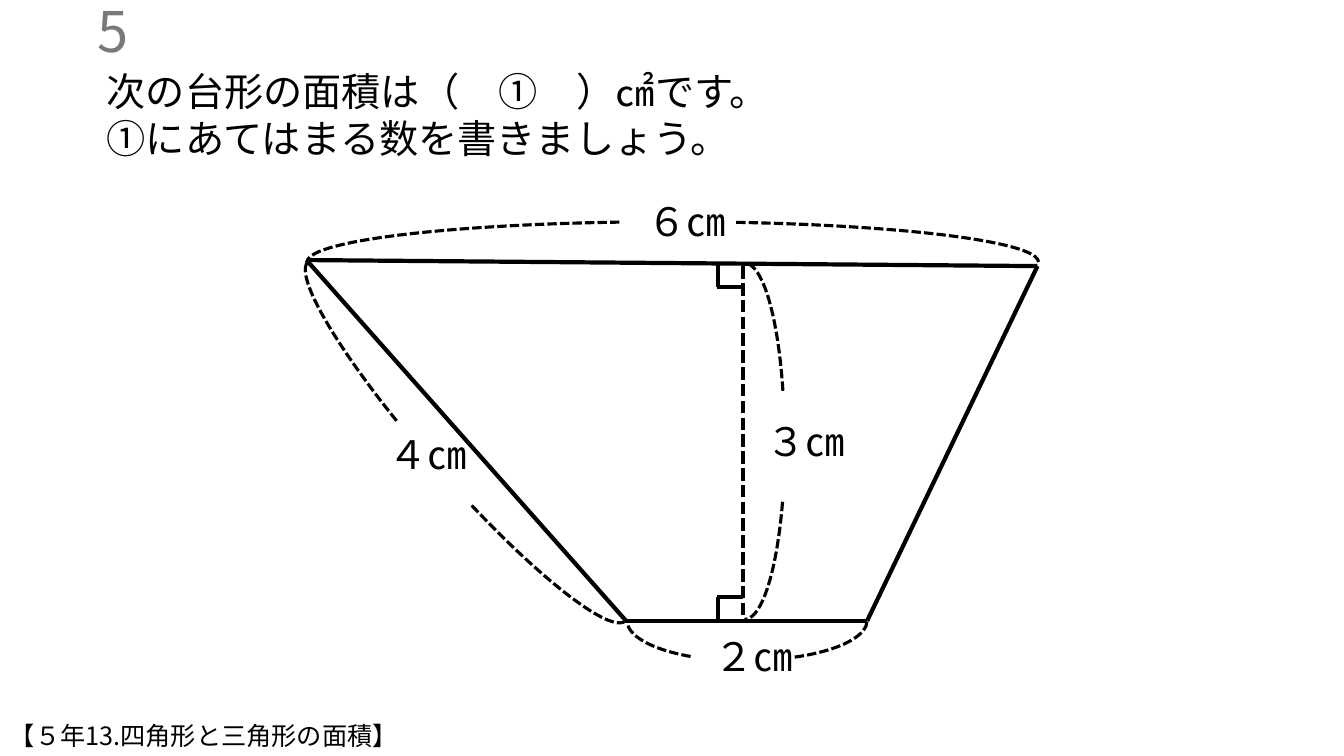
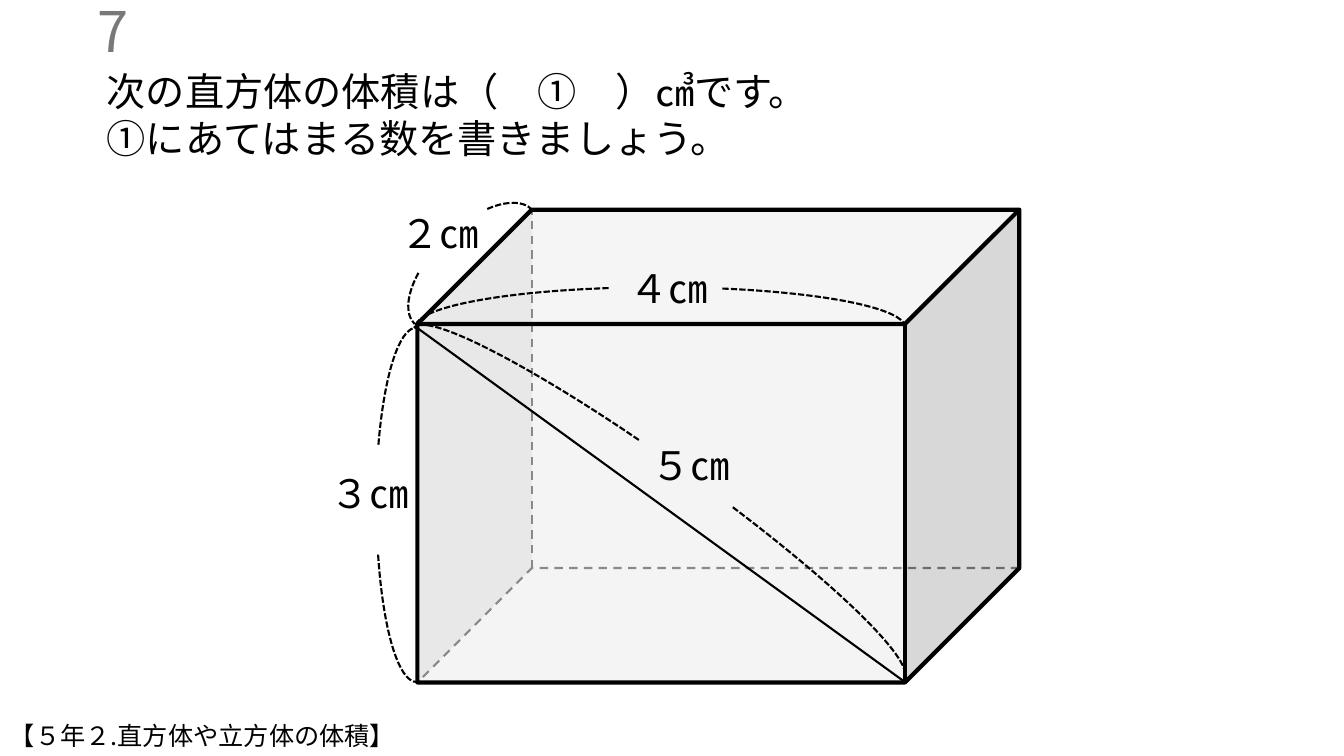
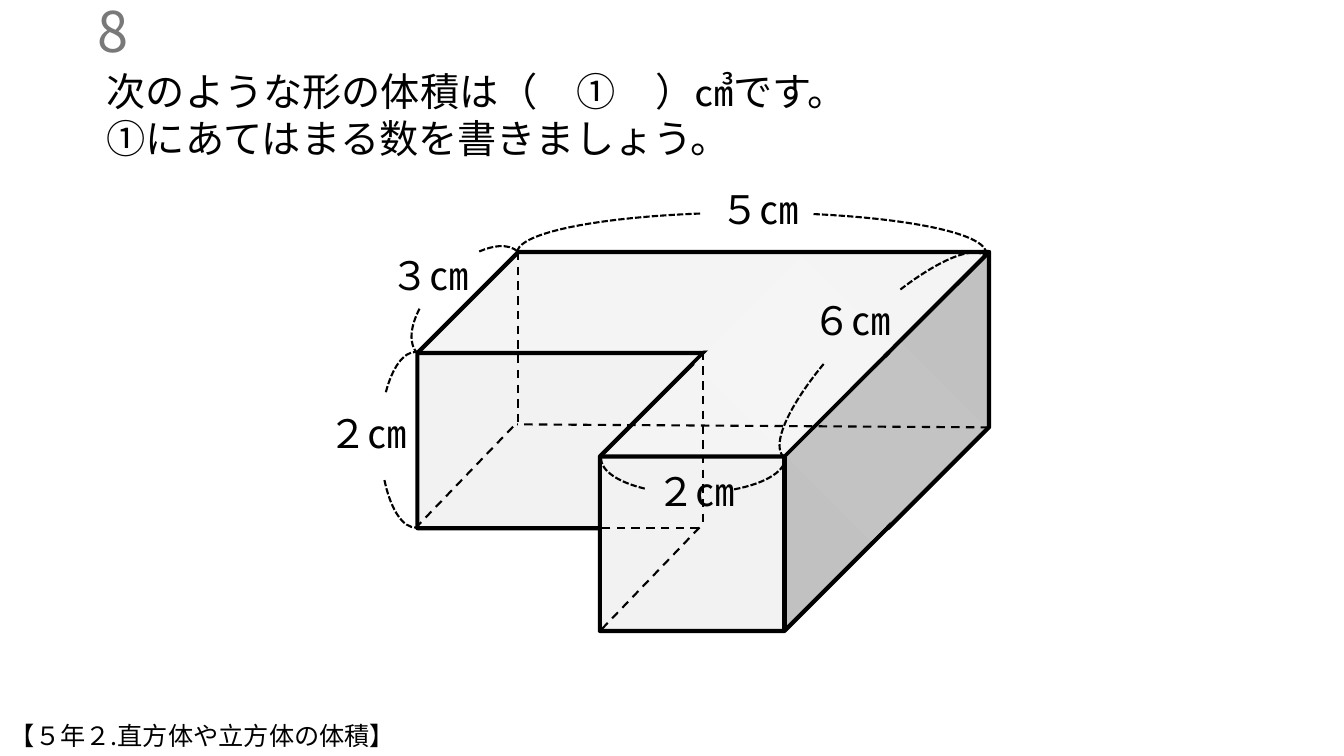
from math import cos, radians, sin

from lxml import etree
from pptx import Presentation
from pptx import util as u
from pptx.dml import color
from pptx.enum import dml, shapes, text
from pptx.oxml import ns

PX = 9144  # EMU in one px, 100 px to the inch
FONT = "Noto Sans CJK JP"
BLACK = color.RGBColor(0x00, 0x00, 0x00)
GREY = color.RGBColor(0x79, 0x79, 0x79)
FACE = color.RGBColor(0xF2, 0xF2, 0xF2)
TOP_FACE = color.RGBColor(0xF5, 0xF5, 0xF5)
SIDE_FACE = color.RGBColor(0xC3, 0xC3, 0xC3)
DASH = dml.MSO_LINE.DASH
FINE_DASH = dml.MSO_LINE.SQUARE_DOT
CUBE = shapes.MSO_SHAPE.CUBE


def emu(*lengths):
    return [u.Emu(round(n * PX)) for n in lengths]


def write(sp, content, size=28, rgb=BLACK, align=text.PP_ALIGN.LEFT, leading=None):
    """Fill a shape with one plain paragraph per line of content."""
    tf = sp.text_frame
    tf.word_wrap = True
    tf.auto_size = text.MSO_AUTO_SIZE.NONE
    tf.vertical_anchor = text.MSO_ANCHOR.MIDDLE
    tf.margin_left = tf.margin_right = u.Emu(10 * PX)
    tf.margin_top = tf.margin_bottom = 0
    for i, line in enumerate(content.split("\n")):
        p = tf.add_paragraph() if i else tf.paragraphs[0]
        pPr = p._p.get_or_add_pPr()
        pPr.set("marL", "0")
        pPr.set("indent", "0")
        etree.SubElement(pPr, ns.qn("a:buNone"))
        p.alignment = align
        p.space_before = u.Pt(0)
        if leading:
            p.line_spacing = u.Pt(leading)
        r = p.add_run()
        r.text = line
        r.font.size = u.Pt(size)
        r.font.name = FONT
        r.font.color.rgb = rgb
        ea = etree.SubElement(r.font._element, ns.qn("a:ea"))
        ea.set("typeface", FONT)


def stroke(line, weight, dash=None):
    line.color.rgb = BLACK
    line.width = u.Pt(weight)
    if dash is not None:
        line.dash_style = dash


class Figure:
    """A drawing whose parts are placed from its own top left corner."""

    def __init__(self, s, left, top):
        self.shapes, self.left, self.top = s.shapes, left, top

    def preset(self, kind, box, rot=0, adj=None, fill=None, alpha=None,
               weight=None, dash=None, flip=False, parent=None):
        x, y, w, h = box
        sp = (parent or self.shapes).add_shape(
            kind, *emu(self.left + x, self.top + y, w, h))
        sp.shadow.inherit = False
        sp.rotation = rot
        if adj is not None:
            sp.adjustments[0] = adj
        if fill is None:
            sp.fill.background()
        else:
            sp.fill.solid()
            sp.fill.fore_color.rgb = fill
        if alpha:
            clr = sp._element.spPr.find(".//" + ns.qn("a:srgbClr"))
            etree.SubElement(clr, ns.qn("a:alpha")).set("val", str(alpha * 1000))
        if weight:
            stroke(sp.line, weight, dash)
        else:
            sp.line.fill.background()
        if flip:
            sp._element.spPr.find(ns.qn("a:xfrm")).set("flipH", "1")
        return sp

    def line(self, x1, y1, x2, y2, weight=3, dash=None):
        ends = emu(self.left + x1, self.top + y1, self.left + x2, self.top + y2)
        cx = self.shapes.add_connector(shapes.MSO_CONNECTOR.STRAIGHT, *ends)
        stroke(cx.line, weight, dash)
        etree.SubElement(cx._element.spPr, ns.qn("a:effectLst"))

    def dimension(self, box, rot, label, label_x, label_y, weight=1.5):
        """Two dashed arcs that meet at a gap, and the length beside it."""
        x, y, w, h = box
        pair = self.shapes.add_group_shape().shapes
        # the mirrored arc is 1% shorter and shares the left end
        shift = 0.005 * w
        dx, dy = shift * (1 - cos(radians(rot))), -shift * sin(radians(rot))
        mirrored = (x + dx, y + dy, 0.99 * w, h - 1)
        for arc_box, start, flip in ((box, 196.71, False), (mirrored, 193, True)):
            arc = self.preset(shapes.MSO_SHAPE.ARC, arc_box, rot, start,
                              weight=weight, dash=FINE_DASH, flip=flip, parent=pair)
            arc.adjustments[1] = 0
        sp = self.shapes.add_textbox(
            *emu(self.left + label_x, self.top + label_y, 118, 57))
        write(sp, label)


def trapezoid(s, left, top):
    fig = Figure(s, left, top)
    for dim in (
        ((5, 30, 725, 80), 0, "６㎝", 332, 1),
        ((322, 386, 238, 80), 180, "２㎝", 399, 432),
        ((-75, 208, 476, 80), 228.6, "４㎝", 75, 232),
        ((262, 208, 353, 80), 90, "３㎝", 450, 219),
    ):
        fig.dimension(*dim, weight=2.25)
    # outline
    corners = [(4, 68), (729, 74), (560, 426), (321, 426)]
    for a, b in zip(corners, corners[1:] + corners[:1]):
        fig.line(*a, *b)
    # height with its right angles
    fig.line(437, 74, 437, 427, dash=FINE_DASH)
    for y, base in ((95, 70), (402, 426)):
        fig.line(437, y, 411, y)
        fig.line(412, base, 412, y)


def cuboid(s, left, top):
    fig = Figure(s, left, top)
    # hidden edges, then visible faces
    for rot, weight, dash in ((180, 1.5, DASH), (0, 3, None)):
        fig.preset(CUBE, (114, 8, 597, 469), rot, 0.242, FACE, 57, weight, dash)
    fig.line(112, 124, 598, 477, 1.5)
    for dim in (
        ((88, 25, 163, 80), 315.6, "２㎝", 87, 3),
        ((-63, 261, 352, 80), 270, "３㎝", 18, 260),
        ((112, 85, 486, 80), 0, "４㎝", 314, 57),
        ((55, 259, 597, 80), 35.5, "５㎝", 336, 233),
    ):
        fig.dimension(*dim)


def l_shaped_solid(s, left, top):
    fig = Figure(s, left, top)
    for box, depth in (((114, 80, 567, 274), 0.366), ((295, 180, 286, 276), 0.373)):
        fig.preset(CUBE, box, 0, depth, FACE, weight=3)
    # patches that join the two blocks
    for box, rot, fill in (((411, 119, 152, 126), 314.9, TOP_FACE),
                           ((520, 188, 118, 161), 45.1, SIDE_FACE)):
        fig.preset(shapes.MSO_SHAPE.RECTANGLE, box, rot, fill=fill)
    for dim in (
        ((213, 41, 465, 80), 0, "５㎝", 405, 9),
        ((93, 95, 142, 71), 314.7, "３㎝", 77, 74),
        ((25, 231, 175, 71), 270, "２㎝", 16, 231),
        ((296, 249, 183, 71), 180, "２㎝", 341, 288),
        ((436, 144, 283, 80), 315.3, "６㎝", 496, 119),
    ):
        fig.dimension(*dim)
    # hidden edges
    for edge in (
        (214, 80, 214, 249), (681, 254, 213, 251), (112, 354, 213, 249),
        (397, 179, 397, 348), (393, 354, 297, 354), (297, 454, 397, 350),
    ):
        fig.line(*edge, 1.5, DASH)


def place(sp, *box):
    sp.left, sp.top, sp.width, sp.height = emu(*box)


def question_slide(prs, number, subject, unit, source, draw, left, top):
    s = prs.slides.add_slide(prs.slide_layouts[1])
    draw(s, left, top)
    # question number
    title, body = s.shapes.title, s.placeholders[1]
    place(title, 0, 10, 137, 40)
    write(title, number, size=40, rgb=GREY, align=text.PP_ALIGN.RIGHT)
    # question
    place(body, 96, 61, 1153, 104)
    write(body, f"次の{subject}は（　①　）{unit}です。\n①にあてはまる数を書きましょう。",
          leading=33.6)
    # unit of the textbook
    write(s.shapes.add_textbox(*emu(0, 710, 749, 40)), source, size=18)


def main():
    prs = Presentation()
    prs.slide_width, prs.slide_height = emu(1333, 750)
    volume = "【５年２.直方体や立方体の体積】"
    question_slide(prs, "5", "台形の面積", "㎠",
                   "【５年13.四角形と三角形の面積】", trapezoid, 300, 190)
    question_slide(prs, "7", "直方体の体積", "㎤", volume, cuboid, 300, 200)
    question_slide(prs, "8", "ような形の体積", "㎤", volume, l_shaped_solid, 300, 170)
    prs.save("out.pptx")


if __name__ == "__main__":
    main()
